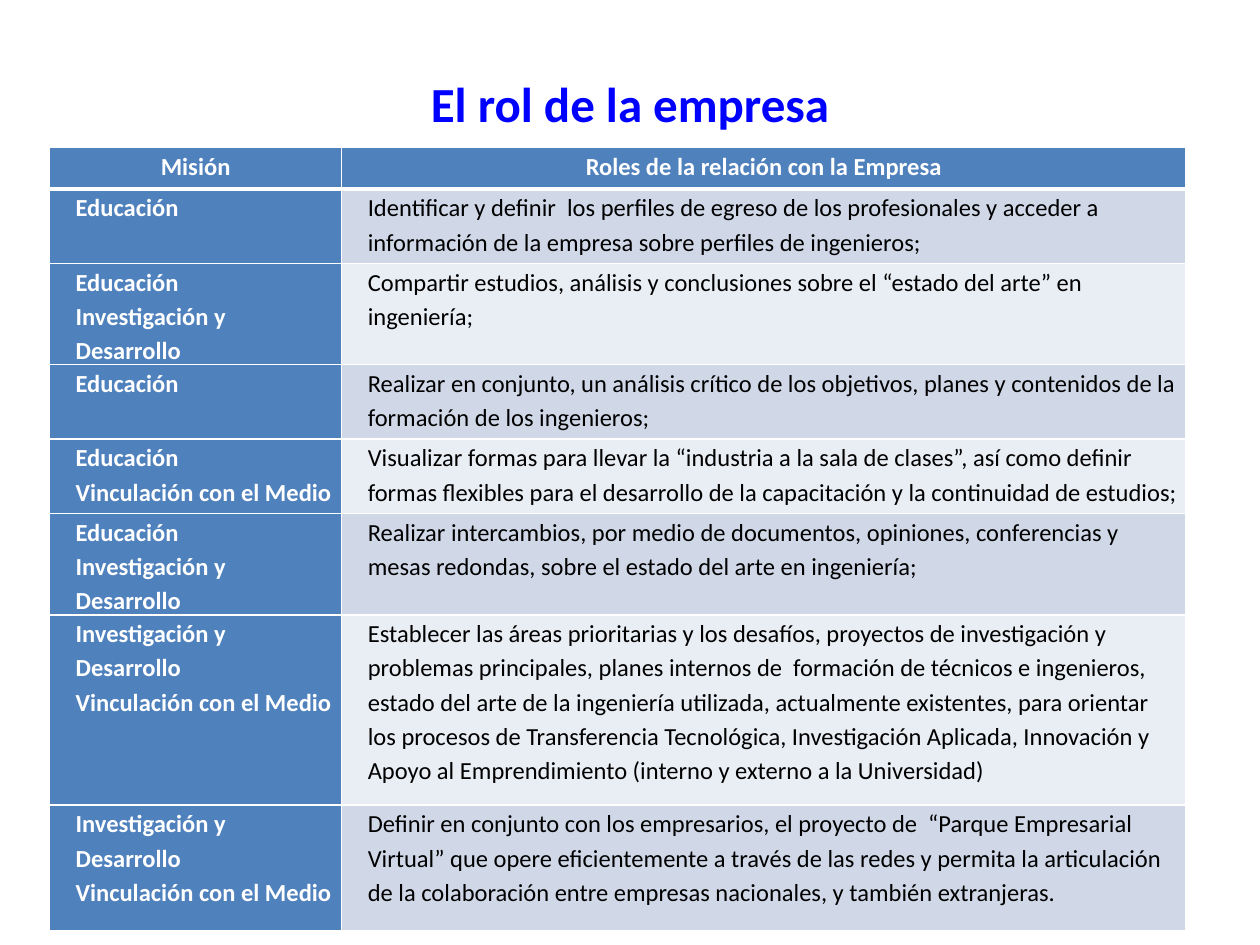
"""Build the slide on the role of companies in the university's missions."""
from lxml.etree import SubElement
from pptx import Presentation
from pptx.dml.color import RGBColor
from pptx.enum.text import MSO_ANCHOR as Anchor, PP_ALIGN as Align
from pptx.oxml.ns import qn
from pptx.util import Pt

FONT = "Calibri"
WHITE, BLACK, TITLE_BLUE, HEADER_BLUE = "FFFFFF", "000000", "0000FF", "4F81BD"
BANDS = ("D0D8E8", "E9EDF4")
TITLE = "El rol de la empresa"
HEADERS = ("Misión", "Roles de la relación con la Empresa")
EDUCATION = "Educación"
RESEARCH = "Investigación y Desarrollo"
OUTREACH = "Vinculación con el Medio"
ROLES = [
    ([EDUCATION], "Identificar y definir  los perfiles de egreso de los profesionales y acceder a "
     "información de la empresa sobre perfiles de ingenieros;"),
    ([EDUCATION, RESEARCH], "Compartir estudios, análisis y conclusiones sobre el “estado del arte” "
     "en ingeniería;"),
    ([EDUCATION], "Realizar en conjunto, un análisis crítico de los objetivos, planes y contenidos "
     "de la formación de los ingenieros;"),
    ([EDUCATION, OUTREACH], "Visualizar formas para llevar la “industria a la sala de clases”, así "
     "como definir formas flexibles para el desarrollo de la capacitación y la continuidad de "
     "estudios;"),
    ([EDUCATION, RESEARCH], "Realizar intercambios, por medio de documentos, opiniones, "
     "conferencias y mesas redondas, sobre el estado del arte en ingeniería;"),
    ([RESEARCH, OUTREACH], "Establecer las áreas prioritarias y los desafíos, proyectos de "
     "investigación y problemas principales, planes internos de  formación de técnicos e "
     "ingenieros, estado del arte de la ingeniería utilizada, actualmente existentes, para "
     "orientar los procesos de Transferencia Tecnológica, Investigación Aplicada, Innovación y "
     "Apoyo al Emprendimiento (interno y externo a la Universidad)"),
    ([RESEARCH, OUTREACH], "Definir en conjunto con los empresarios, el proyecto de  “Parque "
     "Empresarial Virtual” que opere eficientemente a través de las redes y permita la "
     "articulación de la colaboración entre empresas nacionales, y también extranjeras."),
]
COLUMN_WIDTHS = (167, 482.4)
ROW_HEIGHTS = (23.6, 42.5, 42.5, 42.5, 42.5, 42.5, 108.7, 72)
TABLE_LEFT, TABLE_TOP = 28.3, 84.4


def color(value):
    return RGBColor.from_string(value)


def add_lines(paragraph, lines, size, text_color, bold):
    for index, line in enumerate(lines):
        if index:
            paragraph.add_line_break()
        run = paragraph.add_run()
        run.text = line
        run.font.name, run.font.size, run.font.bold = FONT, Pt(size), bold
        run.font.color.rgb = color(text_color)


def add_borders(cell, bottom_width):
    properties = cell._tc.get_or_add_tcPr()
    for side, width in (("L", 1), ("R", 1), ("T", 1), ("B", bottom_width)):
        line = SubElement(properties, qn(f"a:ln{side}"), w=str(Pt(width)))
        fill = SubElement(line, qn("a:solidFill"))
        SubElement(fill, qn("a:srgbClr"), val=WHITE)


def fill_cell(cell, lines, fill, text_color, bold, header=False):
    add_borders(cell, 3 if header else 1)
    cell.fill.solid()
    cell.fill.fore_color.rgb = color(fill)
    cell.margin_left = cell.margin_right = Pt(3.6)
    cell.margin_top = cell.margin_bottom = Pt(0)
    paragraph = cell.text_frame.paragraphs[0]
    paragraph.line_spacing = 1.15
    if header:
        paragraph.alignment = Align.CENTER
    else:
        paragraph._p.get_or_add_pPr().set("marL", str(Pt(11.3)))
        paragraph._p.get_or_add_pPr().set("indent", "0")
    add_lines(paragraph, lines, 14, text_color, bold)


def add_title(slide):
    frame = slide.shapes.add_textbox(Pt(36), Pt(13.7), Pt(648), Pt(90)).text_frame
    frame.word_wrap = True
    frame.vertical_anchor = Anchor.MIDDLE
    paragraph = frame.paragraphs[0]
    paragraph.alignment = Align.CENTER
    add_lines(paragraph, [TITLE], 28, TITLE_BLUE, True)


def add_roles_table(slide):
    table = slide.shapes.add_table(
        len(ROW_HEIGHTS), len(COLUMN_WIDTHS), Pt(TABLE_LEFT), Pt(TABLE_TOP),
        Pt(sum(COLUMN_WIDTHS)), Pt(sum(ROW_HEIGHTS))).table
    for column, width in zip(table.columns, COLUMN_WIDTHS):
        column.width = Pt(width)
    for row, height in zip(table.rows, ROW_HEIGHTS):
        row.height = Pt(height)
    for index, header in enumerate(HEADERS):
        fill_cell(table.cell(0, index), [header], HEADER_BLUE, WHITE, True, header=True)
    for index, (missions, role) in enumerate(ROLES):
        fill_cell(table.cell(index + 1, 0), missions, HEADER_BLUE, WHITE, True)
        fill_cell(table.cell(index + 1, 1), [role], BANDS[index % 2], BLACK, False)


def main():
    presentation = Presentation()
    presentation.slide_width, presentation.slide_height = Pt(720), Pt(540)
    slide = presentation.slides.add_slide(presentation.slide_layouts[6])
    add_title(slide)
    add_roles_table(slide)
    presentation.save("out.pptx")


if __name__ == "__main__":
    main()
